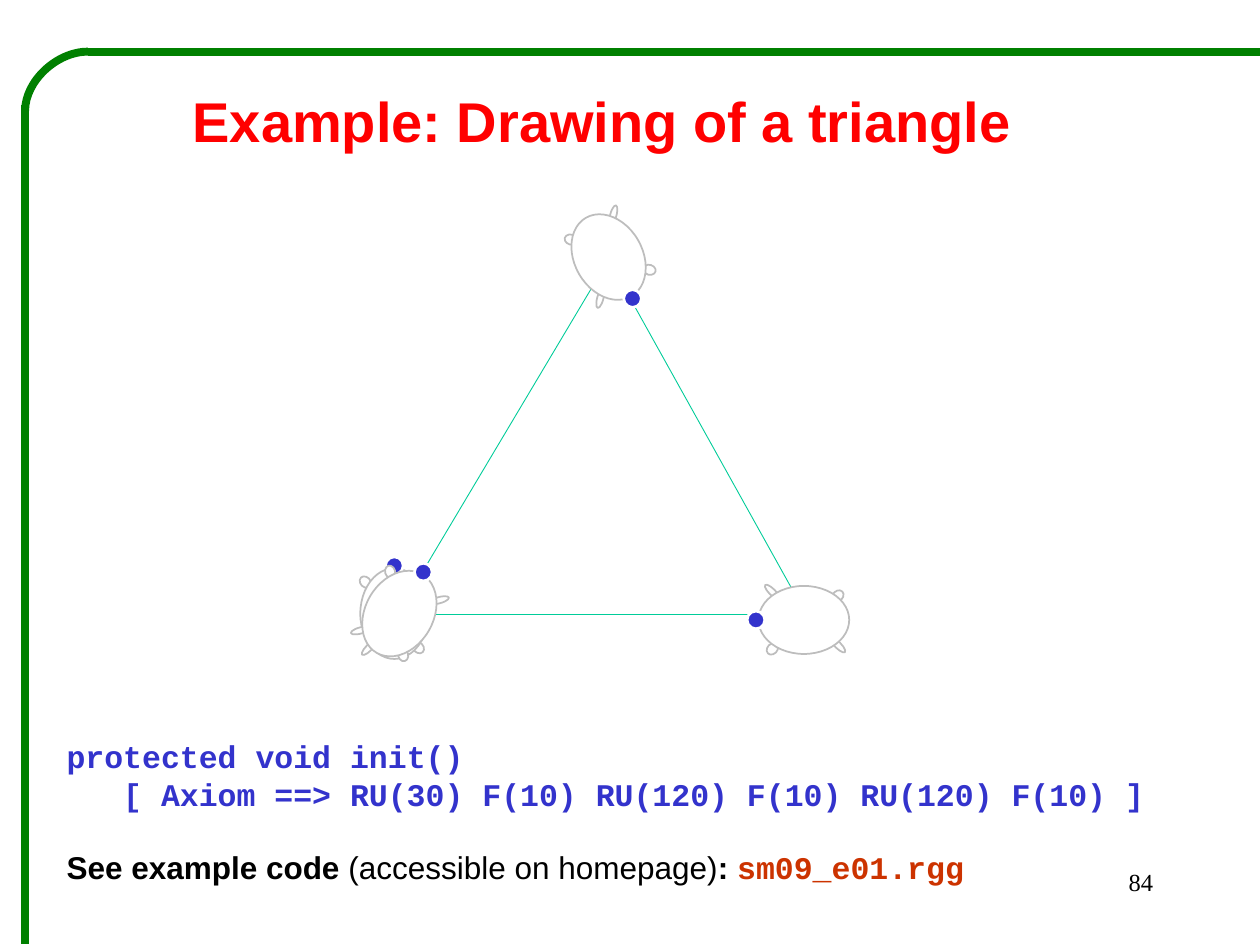
from math import cos, radians, sin

from pptx import Presentation
from pptx.dml.color import RGBColor
from pptx.enum.shapes import MSO_CONNECTOR, MSO_SHAPE
from pptx.enum.text import MSO_ANCHOR, PP_ALIGN
from pptx.oxml.ns import qn
from pptx.util import Inches, Pt

BLUE, TEAL, GREEN, GREY = "3333CC", "00CC99", "008000", "BDBDBD"
WHITE, BLACK, RED, RUST = "FFFFFF", "000000", "FF0000", "CC3300"

CODE = {"name": "Courier New", "size": Pt(18), "bold": True}
BODY = {"name": "Arial", "size": Pt(18), "bold": True}
TITLE = {"name": "Arial", "size": Pt(32), "bold": True}
NUMBER = {"name": "Times New Roman", "size": Pt(14), "bold": False}

# Centre and heading of the turtle after each command
TURTLES = [(3.13, 4.87, 0), (3.17, 4.87, 30), (4.83, 2.04, 150), (6.38, 4.92, 270)]

# Limbs of an unturned turtle: offset from centre, size, own rotation
FEET = [
    (0.19, 0.27, 0.10, 0.08, 45),
    (-0.23, -0.25, 0.10, 0.08, 45),
    (0.22, -0.25, 0.16, 0.05, 135),
    (-0.20, 0.27, 0.16, 0.05, 135),
]


def color(value):
    return RGBColor.from_string(value)


def add_line(slide, start, end, line_color, width, kind=MSO_CONNECTOR.STRAIGHT):
    line = slide.shapes.add_connector(kind, *map(Inches, start + end))
    line.line.color.rgb = color(line_color)
    line.line.width = Pt(width)
    properties = line._element.spPr
    properties.append(properties.makeelement(qn("a:effectLst"), {}))
    return line


def add_ellipse(shapes, center, size, rotation, fill, outline, width):
    left, top = (c - s / 2 for c, s in zip(center, size))
    shape = shapes.add_shape(MSO_SHAPE.OVAL, *map(Inches, (left, top, *size)))
    shape.shadow.inherit = False
    shape.rotation = rotation % 360
    shape.fill.solid()
    shape.fill.fore_color.rgb = color(fill)
    shape.line.color.rgb = color(outline)
    shape.line.width = Pt(width)


def add_turtle(slide, x, y, heading):
    """Group four feet, a body and a head, all turned by the heading."""
    shapes = slide.shapes.add_group_shape().shapes
    c, s = cos(radians(heading)), sin(radians(heading))

    def turned(dx, dy):
        return x + dx * c - dy * s, y + dx * s + dy * c

    for dx, dy, width, height, angle in FEET:
        add_ellipse(shapes, turned(dx, dy), (width, height), angle + heading,
                    WHITE, GREY, 1)
    add_ellipse(shapes, (x, y), (0.54, 0.72), heading, WHITE, GREY, 1)
    add_ellipse(shapes, turned(0, -0.38), (0.14, 0.14), heading, BLUE, WHITE, 1.5)


def add_run(paragraph, text, text_color, **font):
    run = paragraph.add_run()
    run.text = text
    for name, value in font.items():
        setattr(run.font, name, value)
    run.font.color.rgb = color(text_color)


def add_text_box(slide, left, top, width, height):
    box = slide.shapes.add_textbox(*map(Inches, (left, top, width, height)))
    box.text_frame.word_wrap = True
    return box.text_frame


def add_title(slide, text):
    title = slide.shapes.title
    place = {"left": 1.38, "top": 0.6, "width": 6.8, "height": 0.71}
    for name, value in place.items():
        setattr(title, name, Inches(value))
    title.text_frame.vertical_anchor = MSO_ANCHOR.MIDDLE
    paragraph = title.text_frame.paragraphs[0]
    paragraph.alignment = PP_ALIGN.CENTER
    add_run(paragraph, text, RED, **TITLE)


def add_code(slide):
    frame = add_text_box(slide, 0.43, 5.8, 9.14, 1.3)
    add_run(frame.paragraphs[0], "protected void init()", BLUE, **CODE)

    rule = frame.add_paragraph()
    rule._p.get_or_add_pPr().set("marL", str(Inches(0.45)))
    add_run(rule, "[ Axiom ==> RU(30) F(10) RU(120) F(10) RU(120) F(10) ]", BLUE, **CODE)

    hint = frame.add_paragraph()
    hint.space_before = Pt(20.5)
    add_run(hint, "See example code ", BLACK, **BODY)
    add_run(hint, "(accessible on homepage)", BLACK, **{**BODY, "bold": False})
    add_run(hint, ": ", BLACK, **BODY)
    add_run(hint, "sm09_e01.rgg", RUST, **CODE)


def add_slide_number(slide, text):
    paragraph = add_text_box(slide, 7.17, 6.83, 2.08, 0.5).paragraphs[0]
    paragraph.alignment = PP_ALIGN.RIGHT
    add_run(paragraph, text, BLACK, **NUMBER)


def add_frame(slide):
    """Green border: left side, rounded corner, top side."""
    add_line(slide, (0.2, 0.83), (0.2, 7.49), GREEN, 4.5)
    corner = add_line(slide, (0.7, 0.41), (0.2, 0.88), GREEN, 4.5, MSO_CONNECTOR.CURVE)
    corner._element.spPr.find(qn("a:prstGeom")).set("prst", "curvedConnector2")
    add_line(slide, (10, 0.41), (0.7, 0.41), GREEN, 4.5)


def main():
    presentation = Presentation()
    presentation.slide_width, presentation.slide_height = Inches(10), Inches(7.5)
    slide = presentation.slides.add_slide(presentation.slide_layouts[5])

    add_frame(slide)
    add_title(slide, "Example: Drawing of a triangle")

    # Triangle sides, below the turtles
    left, top, right = (3.15, 4.88), (4.83, 2.06), (6.4, 4.88)
    for start, end in ((left, top), (top, right), (right, left)):
        add_line(slide, start, end, TEAL, 0.5)
    for turtle in TURTLES:
        add_turtle(slide, *turtle)

    add_code(slide)
    add_slide_number(slide, "84")
    presentation.save("out.pptx")


if __name__ == "__main__":
    main()
